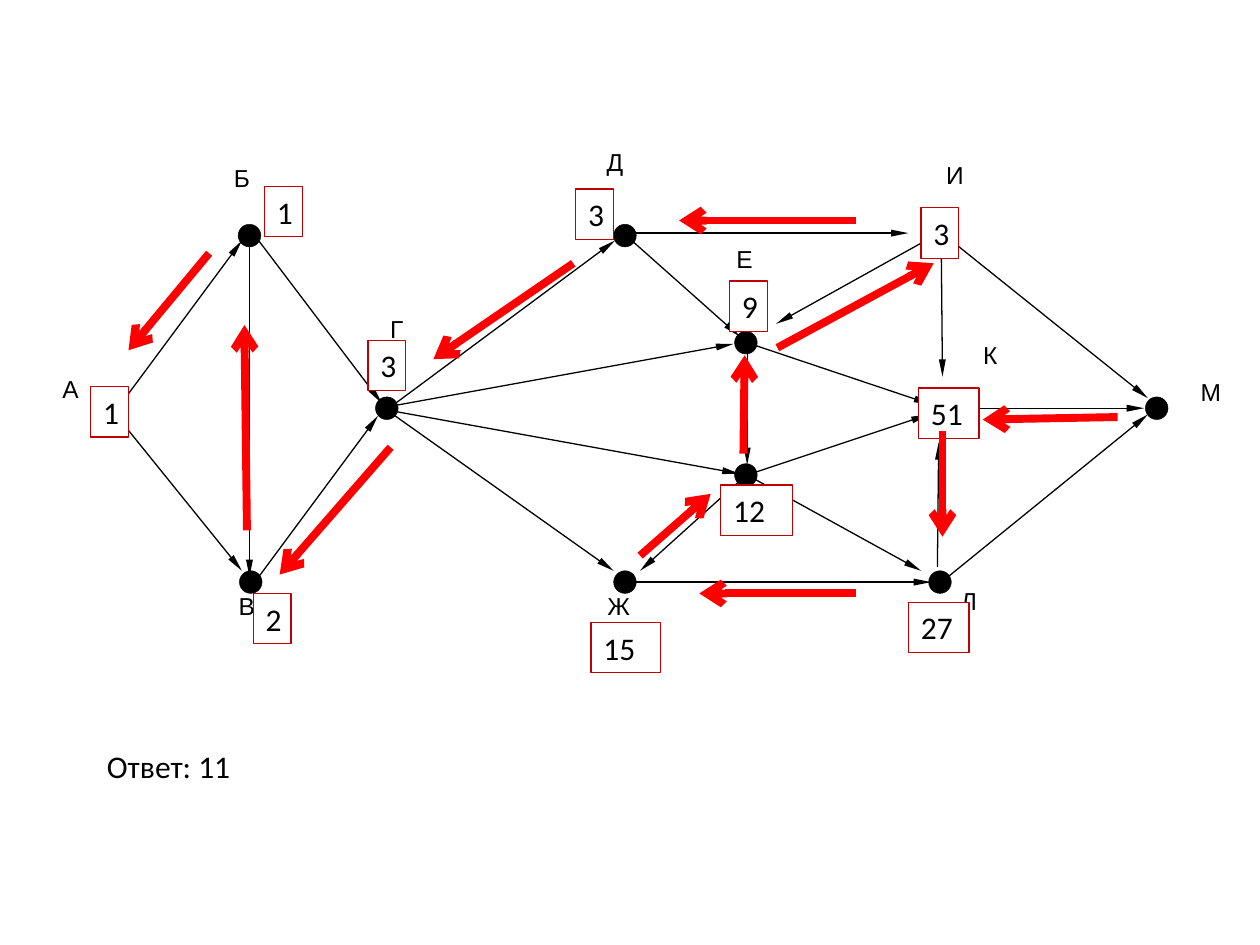
from lxml import etree
from pptx import Presentation
from pptx.dml.color import RGBColor
from pptx.enum.shapes import MSO_CONNECTOR, MSO_SHAPE
from pptx.enum.text import MSO_ANCHOR, MSO_AUTO_SIZE, PP_ALIGN
from pptx.oxml.ns import qn
from pptx.util import Inches, Pt

STRAIGHT = MSO_CONNECTOR.STRAIGHT
OVAL, RECTANGLE = MSO_SHAPE.OVAL, MSO_SHAPE.RECTANGLE
LEFT, CENTER = PP_ALIGN.LEFT, PP_ALIGN.CENTER
BLACK, WHITE, RED, DARK_RED = "000000", "FFFFFF", "FF0000", "C00000"

DOT_SIZE = 0.18
NAME_WIDTH, NAME_HEIGHT = 0.6, 0.49
COUNT_HEIGHT = 0.4

# Left and top of each vertex dot
DOTS = [
    (2.98, 3.15), (4.87, 1.78), (4.87, 4.53), (7.37, 4.53), (1.89, 1.78),
    (1.9, 4.53), (9.09, 3.15), (5.83, 2.63), (5.83, 3.68),
]
# Vertex name: left and top of its label
VERTEX_NAMES = {
    "А": (0.26, 2.97), "Б": (1.62, 1.29), "В": (1.66, 4.69), "Г": (2.85, 2.49),
    "Д": (4.58, 1.17), "Е": (5.61, 1.94), "Ж": (4.61, 4.69), "И": (7.28, 1.27),
    "К": (7.56, 2.7), "Л": (7.39, 4.65), "М": (9.31, 2.99),
}
# Directed edges: start x, y, end x, y
ROADS = [
    (0.87, 3.23, 1.92, 4.53),  # А-В
    (0.92, 3.26, 1.92, 1.91),  # А-Б
    (2, 4.65, 3, 3.3),         # В-Г
    (2, 1.84, 3.03, 3.2),      # Б-Г
    (5.93, 2.77, 5.93, 3.69),  # from Е downwards
    (3.1, 3.23, 4.88, 1.91),   # Г-Д
    (3.05, 3.24, 4.87, 4.53),  # Г-Ж
    (3.07, 3.23, 5.82, 2.73),  # Г-Е
    (3.05, 3.25, 5.87, 3.76),
    (4.97, 1.87, 5.87, 2.67),  # Д-Е
    (5.9, 3.79, 5.08, 4.53),
    (4.93, 4.62, 7.39, 4.62),  # Ж-Л
    (4.93, 1.85, 7.21, 1.85),  # Д-И
    (1.98, 1.96, 1.98, 4.58),  # Б-В
    (7.47, 1.9, 7.48, 2.99),   # И-К
    (7.44, 4.5, 7.45, 3.51),   # Л-К
    (5.93, 3.77, 7.37, 3.29),
    (7.4, 1.88, 6.16, 2.57),   # И-Е
    (5.93, 3.77, 7.31, 4.53),
    (5.9, 2.71, 7.39, 3.21),   # Е-К
    (7.53, 3.24, 9.08, 3.24),  # К-М
    (7.5, 1.87, 9.11, 3.16),   # И-М
    (7.46, 4.63, 9.11, 3.29),  # Л-М
]
# Number of paths: text, left, top, width
COUNTS = [
    ("1", 0.72, 3.07, 0.3), ("1", 2.1, 1.48, 0.3), ("2", 2.01, 4.71, 0.3),
    ("3", 2.92, 2.7, 0.3), ("3", 4.57, 1.5, 0.3), ("9", 5.79, 2.23, 0.3),
    ("15", 4.69, 4.94, 0.55), ("3", 7.31, 1.65, 0.3), ("51", 7.29, 3.08, 0.48),
]
COUNTS_ABOVE_ARROWS = [("12", 5.72, 3.85, 0.57), ("27", 7.21, 4.78, 0.48)]
# Way back from М to А
BACKWARD_STEPS = [
    (8.87, 3.31, 7.8, 3.33), (7.48, 3.42, 7.48, 4.26), (6.79, 4.71, 5.55, 4.71),
    (5.9, 3.6, 5.91, 2.82), (6.17, 2.76, 7.41, 2.09), (6.79, 1.75, 5.39, 1.75),
    (4.55, 2.09, 3.44, 2.85), (3.1, 3.55, 2.22, 4.56), (1.96, 4.21, 1.94, 2.58),
    (1.66, 2.01, 1.02, 2.78), (5.08, 4.41, 5.64, 3.92),
]
ANSWER = "Ответ: 11"


def rgb(color):
    return RGBColor.from_string(color)


def write(shape, text, font="Calibri", size=18, align=LEFT, inset=True,
          wrap=True, grow=True):
    frame = shape.text_frame
    frame.word_wrap = wrap
    frame.auto_size = MSO_AUTO_SIZE.SHAPE_TO_FIT_TEXT if grow else MSO_AUTO_SIZE.NONE
    frame.vertical_anchor = MSO_ANCHOR.TOP
    frame.margin_left = frame.margin_right = Inches(0.1 if inset else 0)
    frame.margin_top = frame.margin_bottom = Inches(0.05 if inset else 0)
    paragraph = frame.paragraphs[0]
    paragraph.alignment = align
    run = paragraph.add_run()
    run.text = text
    run.font.name = font
    run.font.size = Pt(size)
    run.font.color.rgb = rgb(BLACK)


def add_figure(shapes, kind, left, top, width, height, fill, line, line_width):
    figure = shapes.add_shape(kind, Inches(left), Inches(top),
                              Inches(width), Inches(height))
    figure.shadow.inherit = False
    figure.fill.solid()
    figure.fill.fore_color.rgb = rgb(fill)
    figure.line.color.rgb = rgb(line)
    figure.line.width = Pt(line_width)
    return figure


def add_arrow(shapes, ends, color, width, head, head_width="med", head_length="med"):
    arrow = shapes.add_connector(STRAIGHT, *(Inches(value) for value in ends))
    arrow.line.color.rgb = rgb(color)
    arrow.line.width = Pt(width)
    etree.SubElement(arrow.line._get_or_add_ln(), qn("a:tailEnd"),
                     type=head, w=head_width, len=head_length)
    etree.SubElement(arrow._element.spPr, qn("a:effectLst"))


def add_count(shapes, text, left, top, width):
    box = add_figure(shapes, RECTANGLE, left, top, width, COUNT_HEIGHT,
                     WHITE, DARK_RED, 0.75)
    write(box, text)


def main():
    deck = Presentation()
    deck.slide_width, deck.slide_height = Inches(10), Inches(7.5)
    shapes = deck.slides.add_slide(deck.slide_layouts[6]).shapes

    graph = shapes.add_group_shape().shapes
    for left, top in DOTS:
        add_figure(graph, OVAL, left, top, DOT_SIZE, DOT_SIZE, BLACK, BLACK, 0.25)
    for road in ROADS:
        add_arrow(graph, road, BLACK, 0.75, "triangle", "sm", "lg")
    for name, (left, top) in VERTEX_NAMES.items():
        label = graph.add_textbox(Inches(left), Inches(top),
                                  Inches(NAME_WIDTH), Inches(NAME_HEIGHT))
        write(label, name, font="Arial", size=14, align=CENTER, inset=False, grow=False)

    for count in COUNTS:
        add_count(shapes, *count)
    for step in BACKWARD_STEPS:
        add_arrow(shapes, step, RED, 4.5, "arrow")
    answer = shapes.add_textbox(Inches(0.75), Inches(5.88), Inches(1.19), Inches(0.4))
    write(answer, ANSWER, wrap=False)
    for count in COUNTS_ABOVE_ARROWS:
        add_count(shapes, *count)

    deck.save("out.pptx")


if __name__ == "__main__":
    main()
